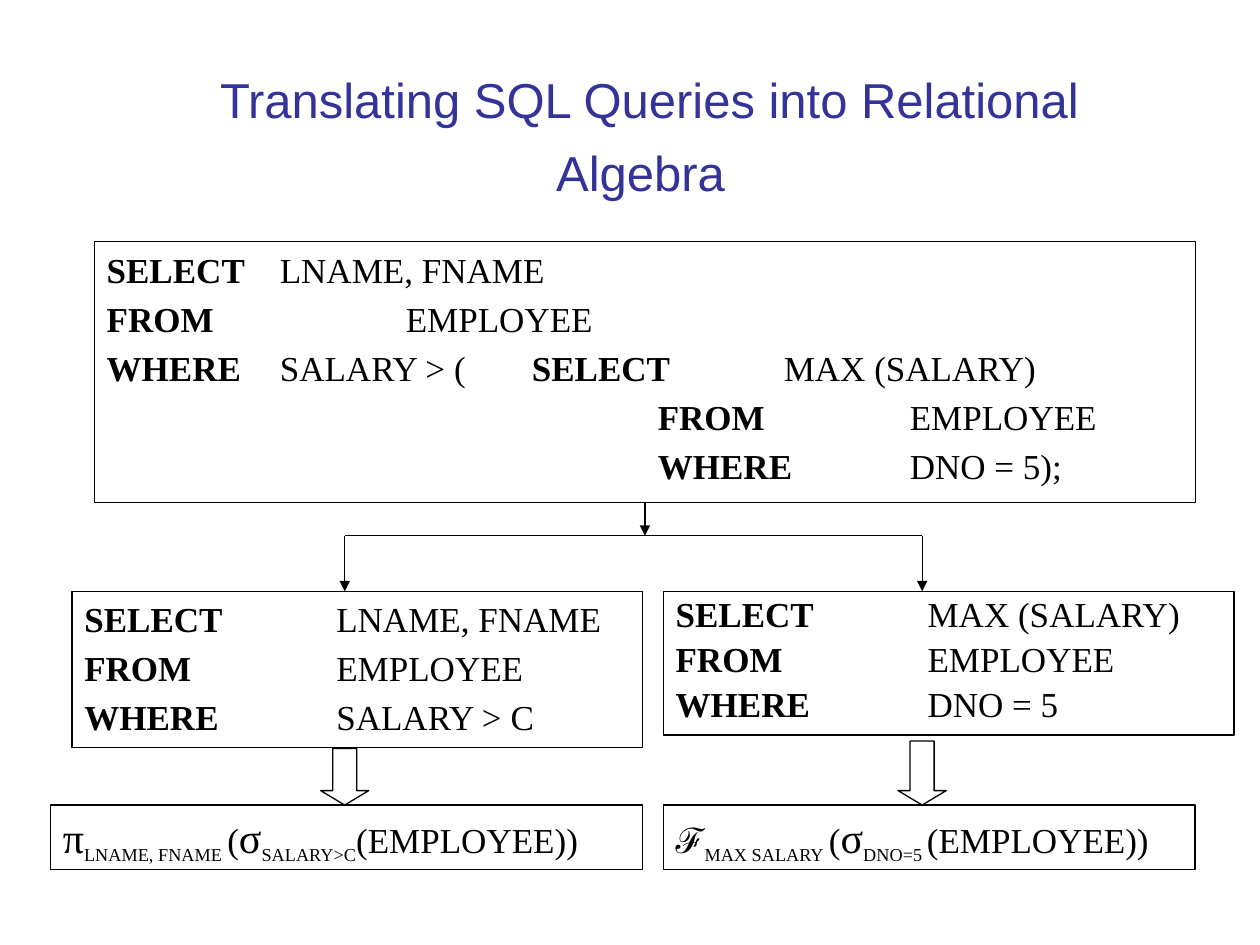
from lxml import etree
from pptx import Presentation
from pptx.dml.color import RGBColor
from pptx.enum.shapes import MSO_CONNECTOR, MSO_SHAPE
from pptx.enum.text import MSO_ANCHOR, MSO_AUTO_SIZE, PP_ALIGN
from pptx.oxml.ns import qn
from pptx.util import Cm, Pt

STRAIGHT = MSO_CONNECTOR.STRAIGHT
DOWN_ARROW = MSO_SHAPE.DOWN_ARROW
TOP, MIDDLE = MSO_ANCHOR.TOP, MSO_ANCHOR.MIDDLE
NO_FIT = MSO_AUTO_SIZE.NONE
CENTER = PP_ALIGN.CENTER
BLACK, INDIGO = "000000", "333399"
SERIF, SANS = "Times New Roman", "Arial"
TAB_STEP = Cm(2.54)

QUERY = [
    ["SELECT", " \tLNAME, FNAME"],
    ["FROM", " \t\tEMPLOYEE"],
    ["WHERE", " \tSALARY > (\t", "SELECT", "\tMAX (SALARY)"],
    ["\t\t\t\t\tFROM", "\t\tEMPLOYEE"],
    ["\t\t\t\t\tWHERE", " \tDNO = 5);"],
]
OUTER_BLOCK = [
    ["SELECT", " \tLNAME, FNAME"],
    ["FROM", " \t\tEMPLOYEE"],
    ["WHERE", " \tSALARY > C"],
]
INNER_BLOCK = [
    ["SELECT", "\tMAX (SALARY)"],
    ["FROM", "\t\tEMPLOYEE"],
    ["WHERE", " \tDNO = 5"],
]
OUTER_ALGEBRA = [
    ("π", 24, False), ("LNAME, FNAME", 18, True), (" ", 20, True), ("(", 20, False),
    ("σ", 24, False), ("SALARY>C", 18, True), ("(EMPLOYEE))", 20, False),
]
INNER_ALGEBRA = [
    ("ℱ", 20, False), ("MAX SALARY", 18, True), (" ", 20, True), ("(", 20, False),
    ("σ", 24, False), ("DNO=5 ", 18, True), ("(EMPLOYEE))", 20, False),
]


def color(value):
    """Turn a hex string into a colour."""
    return RGBColor.from_string(value)


def place(shape, box):
    """Move a shape to a box given as left, top, width, height in cm."""
    shape.left, shape.top, shape.width, shape.height = map(Cm, box)


def outline(shape):
    """Give a shape or connector the thin black line of the diagram."""
    shape.line.color.rgb = color(BLACK)
    shape.line.width = Pt(0.75)


def prepare_frame(shape, anchor=TOP):
    """Set wrapping, fit and insets, and return the text frame."""
    frame = shape.text_frame
    frame.word_wrap = True
    frame.auto_size = NO_FIT
    frame.vertical_anchor = anchor
    frame.margin_left = frame.margin_right = Cm(0.25)
    frame.margin_top = frame.margin_bottom = Cm(0.13)
    return frame


def set_tabs(para, hanging):
    """Remove the bullet and set the hanging indent and tab step."""
    props = para._p.get_or_add_pPr()
    props.set("marL", str(Cm(hanging)))
    props.set("indent", str(-Cm(hanging)))
    props.set("defTabSz", str(TAB_STEP))
    etree.SubElement(props, qn("a:buNone"))


def fill_sql(shape, rows, hanging=0, line_spacing=1.0):
    """Write SQL rows whose spans alternate between bold and regular."""
    outline(shape)
    frame = prepare_frame(shape)
    for index, row in enumerate(rows):
        para = frame.add_paragraph() if index else frame.paragraphs[0]
        set_tabs(para, hanging)
        para.line_spacing = line_spacing
        para.space_before = Pt(4 if index else 0)
        para.font.name, para.font.size = SERIF, Pt(20)
        para.font.color.rgb = color(BLACK)
        for position, text in enumerate(row):
            span = para.add_run()
            span.text = text
            span.font.bold = position % 2 == 0


def fill_title(shape, box):
    """Place and format the slide title."""
    place(shape, box)
    para = prepare_frame(shape, MIDDLE).paragraphs[0]
    para.alignment = CENTER
    para.font.name = SANS
    para.font.color.rgb = color(INDIGO)
    for text, size in [("Translating SQL Queries into Relational Algebra", 28), (" ", 36)]:
        span = para.add_run()
        span.text = text
        span.font.size = Pt(size)


def add_sql_box(page, box, rows, line_spacing=1.0):
    """Add an outlined box with one query block."""
    shape = page.shapes.add_textbox(*map(Cm, box))
    fill_sql(shape, rows, line_spacing=line_spacing)


def add_algebra_box(page, box, spans):
    """Add an outlined box with one relational algebra expression."""
    shape = page.shapes.add_textbox(*map(Cm, box))
    outline(shape)
    para = prepare_frame(shape).paragraphs[0]
    para.font.color.rgb = color(BLACK)
    for text, size, lowered in spans:
        span = para.add_run()
        span.text = text
        span.font.size = Pt(size)
        span.font.name = SANS if text == "ℱ" else SERIF
        if lowered:
            span._r.get_or_add_rPr().set("baseline", "-25000")


def add_block_arrow(page, center, top, bottom):
    """Add a hollow down arrow centred on a column."""
    width, height = 0.97, bottom - top
    box = (center - width / 2, top, width, height)
    arrow = page.shapes.add_shape(DOWN_ARROW, *map(Cm, box))
    arrow.shadow.inherit = False
    arrow.fill.background()
    outline(arrow)
    arrow.adjustments[0] = 0.5
    arrow.adjustments[1] = 0.3


def add_line(page, start, end, arrow=True):
    """Add a straight line, with an arrowhead at its end if asked."""
    line = page.shapes.add_connector(STRAIGHT, *map(Cm, start + end))
    outline(line)
    if arrow:
        etree.SubElement(line.line._get_or_add_ln(), qn("a:tailEnd"), type="triangle")
    etree.SubElement(line._element.spPr, qn("a:effectLst"))
    return line


def add_fork(page, source, columns, middle, bottom):
    """Join the source box to both columns with a forked arrow."""
    trunk = (source.left + source.width / 2) / Cm(1)
    top = (source.top + source.height) / Cm(1)
    add_line(page, (trunk, top), (trunk, middle)).begin_connect(source, 2)
    add_line(page, (columns[0], middle), (columns[1], middle), arrow=False)
    for column in columns:
        add_line(page, (column, middle), (column, bottom))


def main():
    """Build the slide and save the deck."""
    deck = Presentation()
    deck.slide_width, deck.slide_height = Cm(25.4), Cm(19.05)
    page = deck.slides.add_slide(deck.slide_layouts[1])
    fill_title(page.shapes.title, (2.69, 1.17, 20.8, 3.18))
    query = page.placeholders[1]
    place(query, (1.9, 4.87, 22.2, 5.26))
    fill_sql(query, QUERY, hanging=0.95)

    left, right = 6.95, 18.59
    block_top, algebra_top = 11.92, 16.23
    add_fork(page, query, (left, right), 10.8, block_top)
    add_sql_box(page, (1.45, block_top, 11.51, 3.15), OUTER_BLOCK)
    add_sql_box(page, (13.37, block_top, 11.51, 2.9), INNER_BLOCK, 0.9)
    add_block_arrow(page, left, 15.09, algebra_top)
    add_block_arrow(page, right, 14.94, algebra_top)
    add_algebra_box(page, (1.02, algebra_top, 11.94, 1.3), OUTER_ALGEBRA)
    add_algebra_box(page, (13.37, algebra_top, 10.72, 1.3), INNER_ALGEBRA)
    deck.save("out.pptx")


if __name__ == "__main__":
    main()
